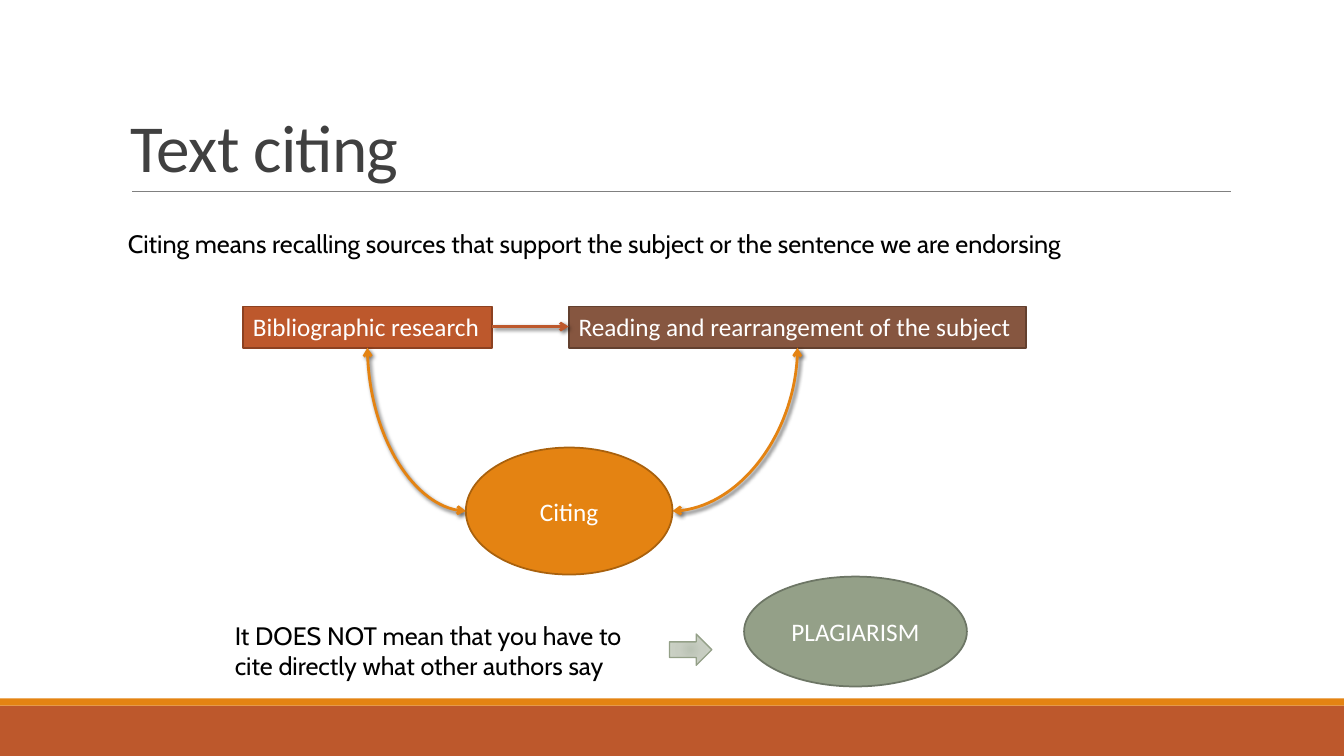
import pptx
import pptx.dml.color
import pptx.enum.shapes
import pptx.enum.text
import pptx.oxml
import pptx.oxml.ns
import pptx.util

SHAPE = pptx.enum.shapes.MSO_SHAPE
CONNECTOR = pptx.enum.shapes.MSO_CONNECTOR
ANCHOR = pptx.enum.text.MSO_ANCHOR
ALIGN = pptx.enum.text.PP_ALIGN
NS = pptx.oxml.ns.nsdecls("a")
ORANGE, RUST, BROWN, SAGE = "E48312", "BD582C", "865640", "94A088"


def rgb(value):
    return pptx.dml.color.RGBColor.from_string(value)


class Deck:
    """Draws on one slide with a grid of 75 rows of square cells."""

    def __init__(self, prs):
        self.cell = prs.slide_height / 75
        self.columns = prs.slide_width / self.cell
        self.s = prs.slides.add_slide(prs.slide_layouts[6])

    def grid(self, *cells):
        return [round(c * self.cell) for c in cells]

    def label(self, sp, text, font="Calibri", size=18, color="FFFFFF",
              align=ALIGN.LEFT, anchor=ANCHOR.TOP, spacing=None, wrap=True):
        tf = sp.text_frame
        tf.word_wrap = wrap
        tf.vertical_anchor = anchor
        p = tf.paragraphs[0]
        p.text = text
        p.alignment = align
        p.line_spacing = spacing
        p.font.name = font
        p.font.size = pptx.util.Pt(size)
        p.font.color.rgb = rgb(color)
        return p

    def text(self, at, text, **style):
        sp = self.s.shapes.add_textbox(*self.grid(*at))
        return self.label(sp, text, **style)

    def shape(self, kind, at, fill, line=None, width=1.25):
        sp = self.s.shapes.add_shape(kind, *self.grid(*at))
        sp.shadow.inherit = False
        sp.fill.solid()
        sp.fill.fore_color.rgb = rgb(fill)
        if line:
            sp.line.color.rgb = rgb(line)
            sp.line.width = pptx.util.Pt(width)
        else:
            sp.line.fill.background()
        return sp

    def box(self, at, fill, line, text):
        sp = self.shape(SHAPE.RECTANGLE, at, fill, line)
        self.label(sp, text, wrap=False)

    def bubble(self, at, fill, line, text):
        sp = self.shape(SHAPE.OVAL, at, fill, line)
        self.label(sp, text, align=ALIGN.CENTER, anchor=ANCHOR.MIDDLE)

    def gradient(self, sp, stops):
        gs = "".join(f'<a:gs pos="{pos * 1000}"><a:srgbClr val="{color}"/></a:gs>'
                     for pos, color in stops)
        fill = pptx.oxml.parse_xml(
            f'<a:gradFill {NS}><a:gsLst>{gs}</a:gsLst><a:path path="circle">'
            '<a:fillToRect l="100000" t="100000" r="100000" b="100000"/>'
            '</a:path></a:gradFill>')
        pr = sp._element.spPr
        pr.replace(pr.find(pptx.oxml.ns.qn("a:solidFill")), fill)

    def line(self, start, end, color, width, kind=CONNECTOR.STRAIGHT,
             heads=(), shadow=""):
        cx = self.s.shapes.add_connector(kind, *self.grid(*start, *end))
        cx.line.color.rgb = rgb(color)
        cx.line.width = pptx.util.Pt(width)
        pr = cx._element.spPr
        ln = pr.find(pptx.oxml.ns.qn("a:ln"))
        for head in heads:
            ln.append(pptx.oxml.parse_xml(f'<a:{head} {NS} type="arrow"/>'))
        pr.append(pptx.oxml.parse_xml(f"<a:effectLst {NS}>{shadow}</a:effectLst>"))
        if kind == CONNECTOR.CURVE:
            pr.find(pptx.oxml.ns.qn("a:prstGeom")).set("prst", "curvedConnector2")

    def arrow(self, start, end, color, **style):
        shadow = ('<a:outerShdw blurRad="38100" dist="25400" dir="2700000" '
                  'rotWithShape="0"><a:srgbClr val="000000">'
                  '<a:alpha val="60000"/></a:srgbClr></a:outerShdw>')
        self.line(start, end, color, 2, shadow=shadow, **style)


def main():
    prs = pptx.Presentation()
    prs.slide_width = pptx.util.Inches(13.33)
    prs.slide_height = pptx.util.Inches(7.5)
    deck = Deck(prs)

    deck.shape(SHAPE.RECTANGLE, (0, 70, deck.columns, 5), RUST)
    deck.shape(SHAPE.RECTANGLE, (0, 69.3, deck.columns, 0.7), ORANGE)
    deck.line((13.1, 19), (122.1, 19), "808080", 0.5)
    title = deck.text((12, 3.1, 110, 15.9), "Text citing", size=48,
                      color="404040", anchor=ANCHOR.BOTTOM, spacing=0.85)
    title.runs[0].font._element.set("spc", "-50")
    deck.text((11.7, 20.7, 110, 5),
              "Citing means recalling sources that support the subject "
              "or the sentence we are endorsing",
              font="Cabin", color="000000", spacing=1.5)

    top, height = 30.4, 4.1
    boxes = [(24.1, 24.7, RUST, "8C4121", "Bibliographic research"),
             (56.4, 45.4, BROWN, "63402F", "Reading and rearrangement of the subject")]
    left, width, middle = 46.2, 20.5, 50.7
    sides = (left, left + width)
    for (x, w, fill, line, label), side in zip(boxes, sides):
        deck.box((x, top, w, height), fill, line, label)
        deck.arrow((side, middle), (x + w / 2, top + height), ORANGE,
                   kind=CONNECTOR.CURVE, heads=("headEnd", "tailEnd"))
    deck.arrow((48.8, 32.4), (56.4, 32.4), RUST, heads=("tailEnd",))
    deck.bubble((left, 44.4, width, 12.6), ORANGE, "A9610D", "Citing")

    deck.text((22.3, 61, 44.1, 7.1),
              "It DOES NOT mean that you have to cite directly what other authors say",
              font="Cabin", color="000000")
    deck.bubble((73.8, 57.2, 22.1, 10.9), SAGE, "6D7665", "PLAGIARISM")
    pointer = deck.shape(SHAPE.RIGHT_ARROW, (66.4, 62.9, 4.2, 3.1), "C7CDC1", SAGE, 1)
    deck.gradient(pointer, [(0, "BBC3B5"), (45, "C7CDC1"), (100, "CDD4C7")])
    prs.save("out.pptx")


if __name__ == "__main__":
    main()
